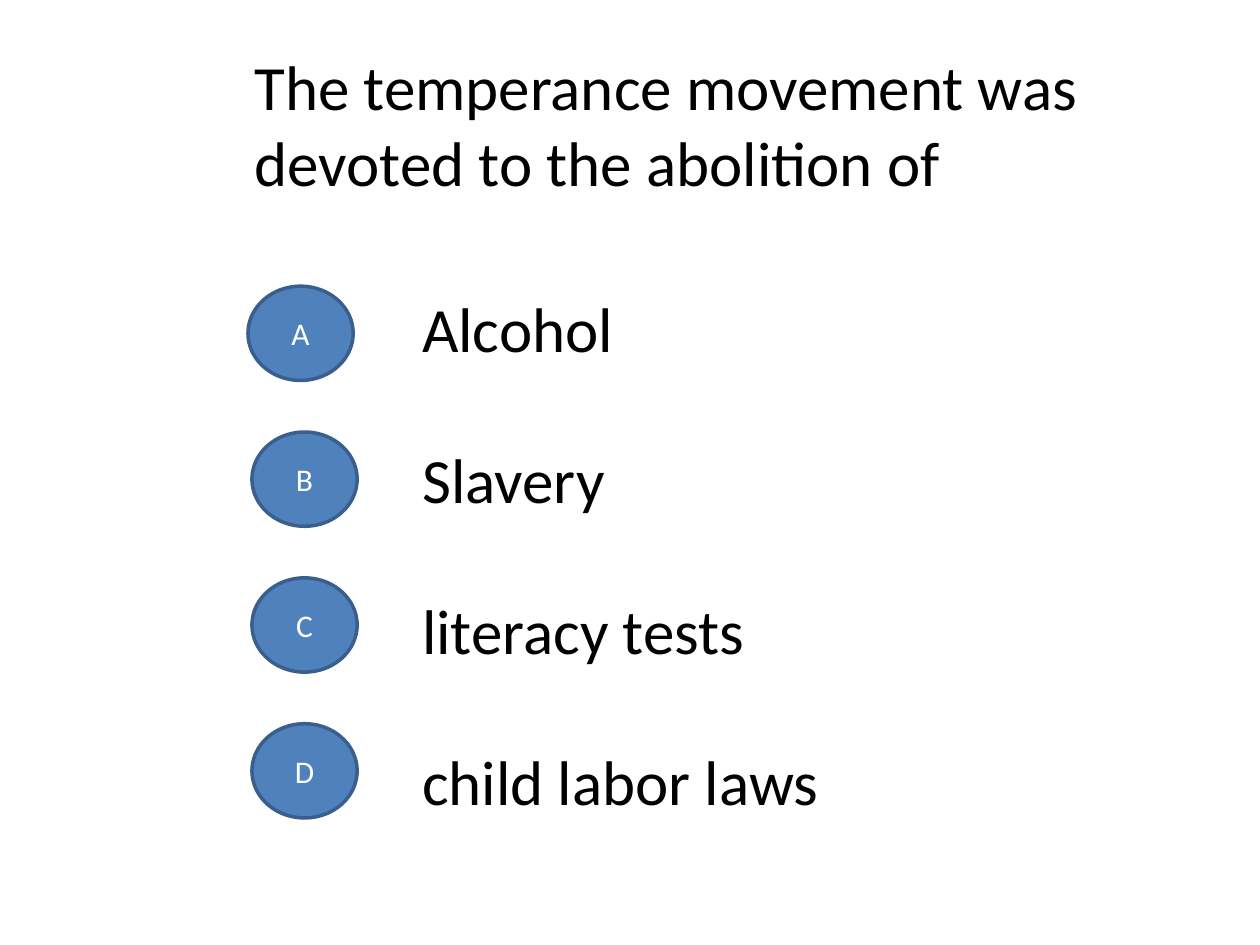
from dataclasses import dataclass

import pptx
import pptx.dml.color
import pptx.enum.shapes
import pptx.enum.text
import pptx.util
from pptx.util import Cm, Pt

BLACK = pptx.dml.color.RGBColor(0x00, 0x00, 0x00)
WHITE = pptx.dml.color.RGBColor(0xFF, 0xFF, 0xFF)
BLUE = pptx.dml.color.RGBColor(0x4F, 0x81, 0xBD)
NAVY = pptx.dml.color.RGBColor(0x3A, 0x5F, 0x8C)
FONT = "Calibri"
TOP, STEP = 5.77, 2.94  # first badge and badge pitch, in cm


@dataclass
class Choice:
    mark: str
    text: str
    left: float = 5.08


CHOICES = [
    Choice("A", "Alcohol", 5.0),
    Choice("B", "Slavery"),
    Choice("C", "literacy tests"),
    Choice("D", "child labor laws"),
]


def add_run(para, text: str, size: int, color) -> None:
    run = para.add_run()
    run.text = text
    run.font.name = FONT
    run.font.size = Pt(size)
    run.font.color.rgb = color


def add_text(slide, lines: list[str], left: float, top: float,
             width: float, height: float) -> None:
    box = slide.shapes.add_textbox(Cm(left), Cm(top), Cm(width), Cm(height))
    frame = box.text_frame
    frame.word_wrap = True
    for num, line in enumerate(lines):
        para = frame.add_paragraph() if num else frame.paragraphs[0]
        if num:
            para.space_before = Pt(43)
        add_run(para, line, 36, BLACK)


def add_badge(slide, choice: Choice, top: float) -> None:
    badge = slide.shapes.add_shape(
        pptx.enum.shapes.MSO_SHAPE.OVAL,
        Cm(choice.left), Cm(top), Cm(2.12), Cm(1.9))
    badge.shadow.inherit = False
    badge.fill.solid()
    badge.fill.fore_color.rgb = BLUE
    badge.line.color.rgb = NAVY
    badge.line.width = Pt(2)
    frame = badge.text_frame
    frame.vertical_anchor = pptx.enum.text.MSO_ANCHOR.MIDDLE
    para = frame.paragraphs[0]
    para.alignment = pptx.enum.text.PP_ALIGN.CENTER
    add_run(para, choice.mark, 18, WHITE)


def main() -> None:
    deck = pptx.Presentation()
    deck.slide_width, deck.slide_height = Cm(25.4), Cm(19.05)
    slide = deck.slides.add_slide(deck.slide_layouts[6])

    # Question
    add_text(slide, ["The temperance movement was devoted to the abolition of"],
             4.88, 0.84, 17.15, 3.33)

    # Answers
    add_text(slide, [choice.text for choice in CHOICES], 8.26, 5.72, 12.7, 11.02)

    # Letter badges
    for num, choice in enumerate(CHOICES):
        add_badge(slide, choice, TOP + num * STEP)

    deck.save("out.pptx")


if __name__ == "__main__":
    main()
